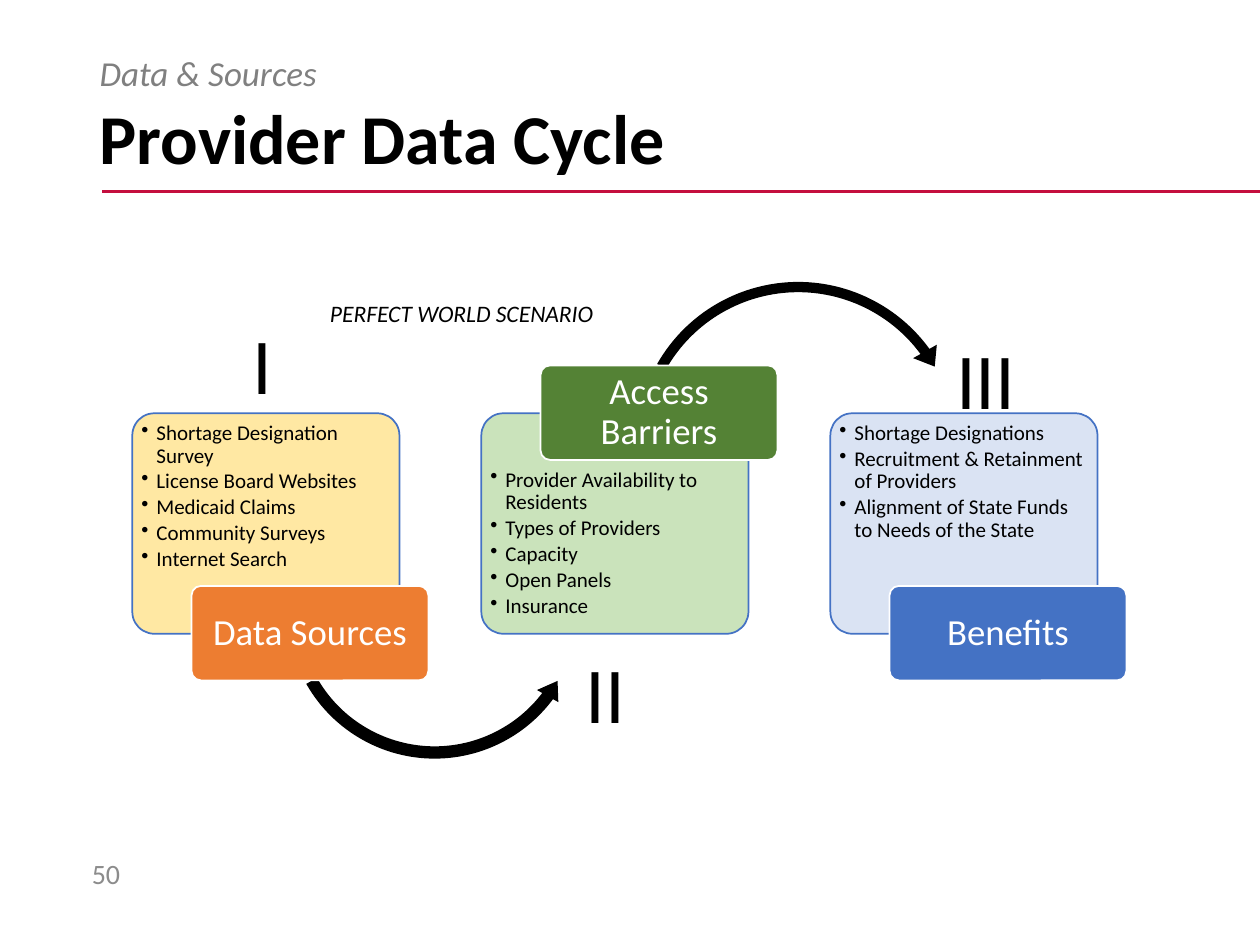
from lxml.etree import SubElement
from pptx import Presentation
from pptx.dml.color import RGBColor
from pptx.enum.shapes import MSO_CONNECTOR, MSO_SHAPE
from pptx.enum.text import MSO_ANCHOR, MSO_AUTO_SIZE, PP_ALIGN
from pptx.oxml.ns import qn
from pptx.util import Inches, Pt

TITLE = "Provider Data Cycle"
SUBTITLE = "Data & Sources"
SCENARIO = "PERFECT WORLD SCENARIO"
PAGE_NUMBER = "50"
STAGES = [
    dict(label="Data Sources", label_color="ED7D31", panel_color="FFE699", opacity=90,
         label_top=4.65, text_top=0.02, numeral="I", numeral_box=(1.91, 2.52, 0.7, 0.78),
         items=["Shortage Designation Survey", "License Board Websites", "Medicaid Claims",
                "Community Surveys", "Internet Search"]),
    dict(label="Access Barriers", label_color="548235", panel_color="C5E0B4", opacity=90,
         label_top=2.9, text_top=0.39, numeral="II", numeral_box=(4.55, 5.13, 0.9, 0.78),
         items=["Provider Availability to Residents", "Types of Providers", "Capacity",
                "Open Panels", "Insurance"]),
    dict(label="Benefits", label_color="4472C4", panel_color="DAE3F3", opacity=100,
         label_top=4.65, text_top=0.02, numeral="III", numeral_box=(7.49, 2.64, 1.1, 0.78),
         items=["Shortage Designations", "Recruitment & Retainment of Providers",
                "Alignment of State Funds to Needs of the State"]),
]
ARROWS = [
    (MSO_SHAPE.LEFT_CIRCULAR_ARROW, (2.23, 3.63, 2.44, 2.44), (0.04, 4.42, 22.18, 90.25, 0.04)),
    (MSO_SHAPE.CIRCULAR_ARROW, (4.98, 2.17, 2.71, 2.71), (0.03, 3.95, 194.3, 125.76, 0.04)),
]
PANEL_LEFT, PANEL_TOP, PANEL_STEP = 1.05, 3.28, 2.77
PANEL_SIZE, LABEL_SIZE, LABEL_SHIFT = (2.12, 1.75), (1.88, 0.75), 0.47


def color(hex_code):
    return RGBColor.from_string(hex_code)


def place(shape, box):
    shape.left, shape.top, shape.width, shape.height = map(Inches, box)


def write(shape, *lines, size, font="Calibri", ink="000000", bold=False, italic=False,
          align=PP_ALIGN.LEFT, anchor=MSO_ANCHOR.TOP, insets=(0.1, 0.05, 0.1, 0.05),
          spacing=1.0, after=0, bullet=False, wrap=True):
    """Fill a shape with formatted paragraphs."""
    frame = shape.text_frame
    frame.auto_size = MSO_AUTO_SIZE.NONE
    frame.word_wrap = wrap
    frame.vertical_anchor = anchor
    (frame.margin_left, frame.margin_top,
     frame.margin_right, frame.margin_bottom) = map(Inches, insets)
    for index, line in enumerate(lines):
        paragraph = frame.add_paragraph() if index else frame.paragraphs[0]
        paragraph.text = line
        paragraph.alignment = align
        paragraph.line_spacing = spacing
        paragraph.space_before = Pt(0)
        paragraph.space_after = Pt(after)
        properties = paragraph._p.get_or_add_pPr()
        indent = Inches(0.12) if bullet else 0
        properties.set("marL", str(indent))
        properties.set("indent", str(-indent))
        if bullet:
            SubElement(properties, qn("a:buChar")).set("char", "•")
        else:
            SubElement(properties, qn("a:buNone"))
        style = paragraph.font
        style.size, style.name, style.bold, style.italic = Pt(size), font, bold, italic
        style.color.rgb = color(ink)


def add_text(slide, box, text, **text_format):
    write(slide.shapes.add_textbox(*map(Inches, box)), text, **text_format)


def add_filled(slide, preset, box, fill, adjustments, line=None, opacity=100):
    shape = slide.shapes.add_shape(preset, *map(Inches, box))
    shape.shadow.inherit = False
    shape.fill.solid()
    shape.fill.fore_color.rgb = color(fill)
    if opacity < 100:
        tint = shape.fill._xPr.find(qn("a:solidFill"))[0]
        SubElement(tint, qn("a:alpha")).set("val", str(opacity * 1000))
    if line:
        shape.line.color.rgb = color(line)
        shape.line.width = Pt(1)
    else:
        shape.line.fill.background()
    for index, value in enumerate(adjustments):
        shape.adjustments[index] = value
    return shape


def add_stage(slide, index, stage):
    left = PANEL_LEFT + index * PANEL_STEP
    panel = add_filled(slide, MSO_SHAPE.ROUNDED_RECTANGLE, (left, PANEL_TOP, *PANEL_SIZE),
                       stage["panel_color"], [0.1], "4472C4", stage["opacity"])
    write(panel, *stage["items"], size=12, spacing=0.9, after=1.8, bullet=True,
          insets=(0.02, stage["text_top"], 0.02, 0.02))
    if index < len(ARROWS):
        preset, box, adjustments = ARROWS[index]
        add_filled(slide, preset, box, "000000", adjustments)
    label = add_filled(slide, MSO_SHAPE.ROUNDED_RECTANGLE,
                       (left + LABEL_SHIFT, stage["label_top"], *LABEL_SIZE),
                       stage["label_color"], [0.1], "FFFFFF")
    write(label, stage["label"], size=21, ink="FFFFFF", align=PP_ALIGN.CENTER,
          anchor=MSO_ANCHOR.MIDDLE, insets=(0.04, 0.03, 0.04, 0.03), spacing=0.9)


def main():
    deck = Presentation()
    deck.slide_width, deck.slide_height = Inches(10), Inches(7.5)
    slide = deck.slides.add_slide(deck.slide_layouts[1])

    rule = slide.shapes.add_connector(MSO_CONNECTOR.STRAIGHT, Inches(0.81), Inches(1.52),
                                      Inches(10), Inches(1.52))
    rule.line.color.rgb = color("C40E3E")
    rule.line.width = Pt(2.25)
    SubElement(rule._element.spPr, qn("a:effectLst"))

    title, subtitle = slide.shapes.title, slide.placeholders[1]
    place(title, (0.69, 0.4, 8.62, 1.45))
    write(title, TITLE, size=40, bold=True, anchor=MSO_ANCHOR.MIDDLE, spacing=0.9)
    place(subtitle, (0.69, 0.4, 8.62, 0.49))
    write(subtitle, SUBTITLE, size=20, ink="808080", italic=True, spacing=0.9)

    for index, stage in enumerate(STAGES):
        add_stage(slide, index, stage)
    for stage in STAGES:
        add_text(slide, stage["numeral_box"], stage["numeral"], size=40.5, font="Lato")
    add_text(slide, (2.52, 2.32, 2.32, 0.33), SCENARIO, size=13.5, italic=True, wrap=False)
    add_text(slide, (0.63, 6.73, 0.55, 0.4), PAGE_NUMBER, size=16, ink="8C8C8C",
             anchor=MSO_ANCHOR.MIDDLE)
    deck.save("out.pptx")


if __name__ == "__main__":
    main()
